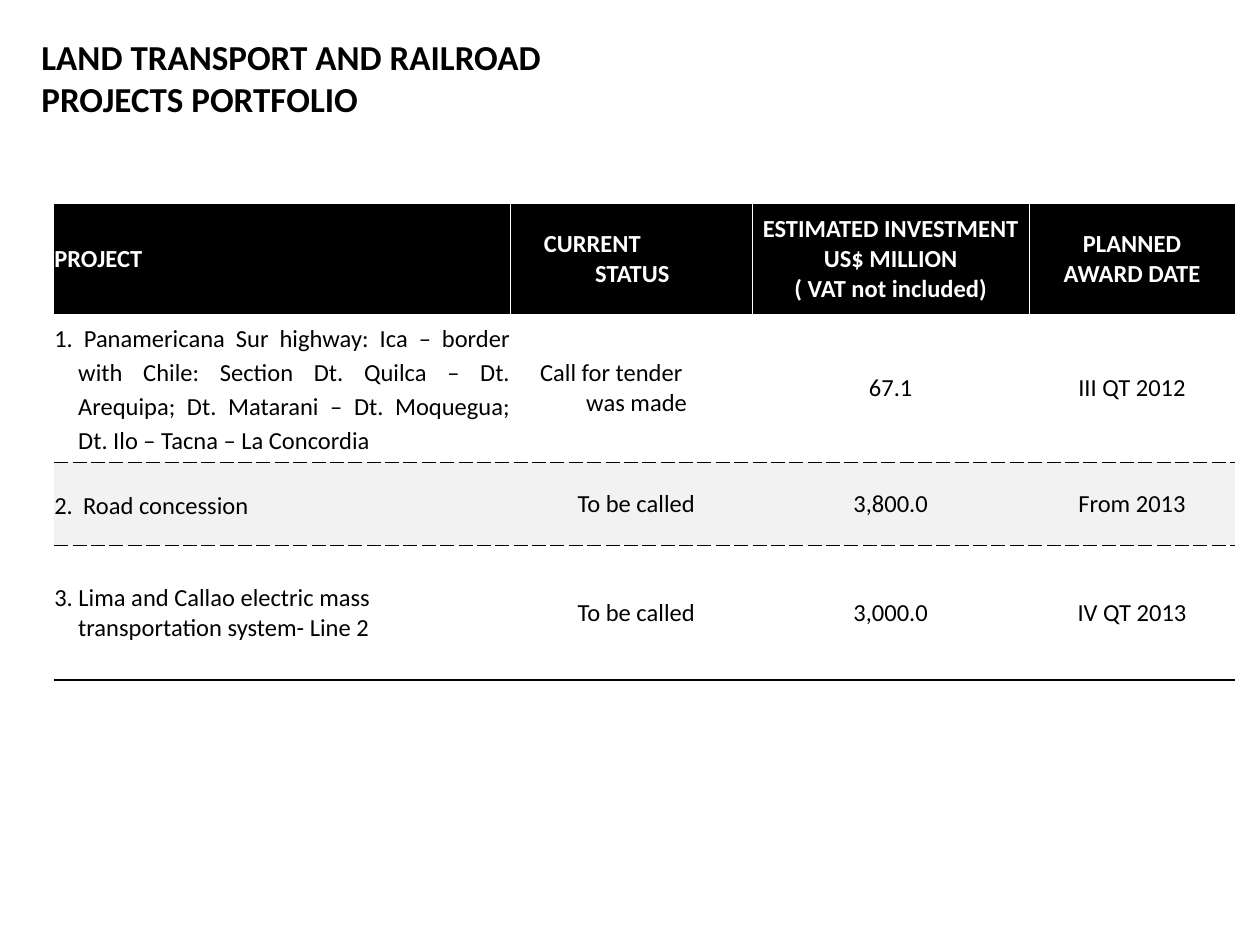
from lxml import etree
from pptx import Presentation
from pptx.dml.color import RGBColor
from pptx.enum import text
from pptx.oxml.ns import qn
from pptx.util import Pt

THEME = {"font": "Calibri", "title": 20, "body": 14, "ink": "000000", "paper": "FFFFFF", "band": "F2F2F2"}

TITLE = "LAND TRANSPORT AND RAILROAD PROJECTS PORTFOLIO"
ROWS = [
    ["PROJECT", "CURRENT\vSTATUS",
     "ESTIMATED INVESTMENT\nUS$ MILLION\n( VAT not included)", "PLANNED\nAWARD DATE"],
    ["1. Panamericana Sur highway: Ica – border with Chile: Section Dt. Quilca – Dt. Arequipa; "
     "Dt. Matarani – Dt. Moquegua; Dt. Ilo – Tacna – La Concordia",
     "Call for tender\vwas made", "67.1", "III QT 2012"],
    ["2.\tRoad concession", "To be called", "3,800.0", "From 2013"],
    ["3. Lima and Callao electric mass transportation system- Line 2",
     "To be called", "3,000.0", "IV QT 2013"],
]
COLUMN_WIDTHS = [260.6, 138.2, 158.4, 117.4]
ROW_HEIGHTS = [62.6, 85, 47.5, 77]
TABLE_LEFT, TABLE_TOP = 31, 116.6
NO_STYLE = "{2D5ABB26-0587-4C30-8999-92F81FD0307C}"

ALIGN = text.PP_ALIGN
LEFT = {"alignment": ALIGN.LEFT}
CENTER = {"alignment": ALIGN.CENTER}
JUSTIFY = {"alignment": ALIGN.JUSTIFY, "line_spacing": 1.15}
FORMATS = {(0, 0): LEFT, (0, 1): LEFT, (1, 0): JUSTIFY, (1, 1): LEFT, (2, 0): JUSTIFY, (3, 0): LEFT}
INDENTS = {(0, 1): (48.5, -29.3), (1, 0): (13.7, -13.7), (1, 1): (43.4, -26.4),
           (2, 0): (16.5, -16.5), (2, 1): (5.8, 0), (3, 0): (13.7, -13.7), (3, 1): (5.8, 0)}

DASHED = (THEME["ink"], 0.5, "sysDash")
SOLID = (THEME["ink"], 0.5, "solid")
DIVIDER = (THEME["paper"], 0.5, "solid")
CLOSING = (THEME["ink"], 1, "solid")


def set_attributes(target, values):
    for name, value in values.items():
        setattr(target, name, value)


def style_font(paragraph, size, color, bold):
    set_attributes(paragraph.font, {"name": THEME["font"], "size": Pt(size), "bold": bold})
    paragraph.font.color.rgb = RGBColor.from_string(color)


def cell_borders(row, column):
    last_column = len(COLUMN_WIDTHS) - 1
    if row == 0:
        return {"L": DIVIDER if column else SOLID,
                "R": DIVIDER if column < last_column else SOLID, "T": SOLID}
    borders = {"T": DASHED} if row > 1 else {}
    borders["B"] = CLOSING if row == len(ROWS) - 1 else DASHED
    return borders


def draw_borders(cell, borders):
    properties = cell._tc.get_or_add_tcPr()
    for side, (color, width, dash) in borders.items():
        line = etree.SubElement(properties, qn(f"a:ln{side}"), w=str(Pt(width)))
        fill = etree.SubElement(line, qn("a:solidFill"))
        etree.SubElement(fill, qn("a:srgbClr"), val=color)
        etree.SubElement(line, qn("a:prstDash"), val=dash)


def fill_cell(cell, row, column):
    set_attributes(cell, {"text": ROWS[row][column], "vertical_anchor": text.MSO_ANCHOR.MIDDLE,
                          "margin_left": 0, "margin_right": 0, "margin_top": 0, "margin_bottom": 0})
    margin, indent = INDENTS.get((row, column), (0, 0))
    for paragraph in cell.text_frame.paragraphs:
        set_attributes(paragraph, FORMATS.get((row, column), CENTER))
        properties = paragraph._p.get_or_add_pPr()
        properties.set("marL", str(Pt(margin)))
        properties.set("indent", str(Pt(indent)))
        color = THEME["ink"] if row else THEME["paper"]
        style_font(paragraph, THEME["body"], color, row == 0)
    draw_borders(cell, cell_borders(row, column))
    background = {0: THEME["ink"], 2: THEME["band"]}.get(row)
    if background:
        cell.fill.solid()
        cell.fill.fore_color.rgb = RGBColor.from_string(background)
    else:
        cell.fill.background()


def add_title(slide):
    frame = slide.shapes.add_textbox(Pt(16.6), Pt(16.6), Pt(332), Pt(55.4)).text_frame
    set_attributes(frame, {"word_wrap": True, "text": TITLE})
    style_font(frame.paragraphs[0], THEME["title"], THEME["ink"], True)


def add_projects(slide):
    table = slide.shapes.add_table(
        len(ROWS), len(COLUMN_WIDTHS), Pt(TABLE_LEFT), Pt(TABLE_TOP),
        Pt(sum(COLUMN_WIDTHS)), Pt(sum(ROW_HEIGHTS))).table
    set_attributes(table, {"first_row": False, "horz_banding": False})
    table._tbl.tblPr.find(qn("a:tableStyleId")).text = NO_STYLE
    for column, width in zip(table.columns, COLUMN_WIDTHS):
        column.width = Pt(width)
    for row, height in enumerate(ROW_HEIGHTS):
        table.rows[row].height = Pt(height)
        for column in range(len(COLUMN_WIDTHS)):
            fill_cell(table.cell(row, column), row, column)


def main():
    presentation = Presentation()
    set_attributes(presentation, {"slide_width": Pt(720), "slide_height": Pt(540)})
    slide = presentation.slides.add_slide(presentation.slide_layouts[6])
    add_title(slide)
    add_projects(slide)
    presentation.save("out.pptx")


if __name__ == "__main__":
    main()
